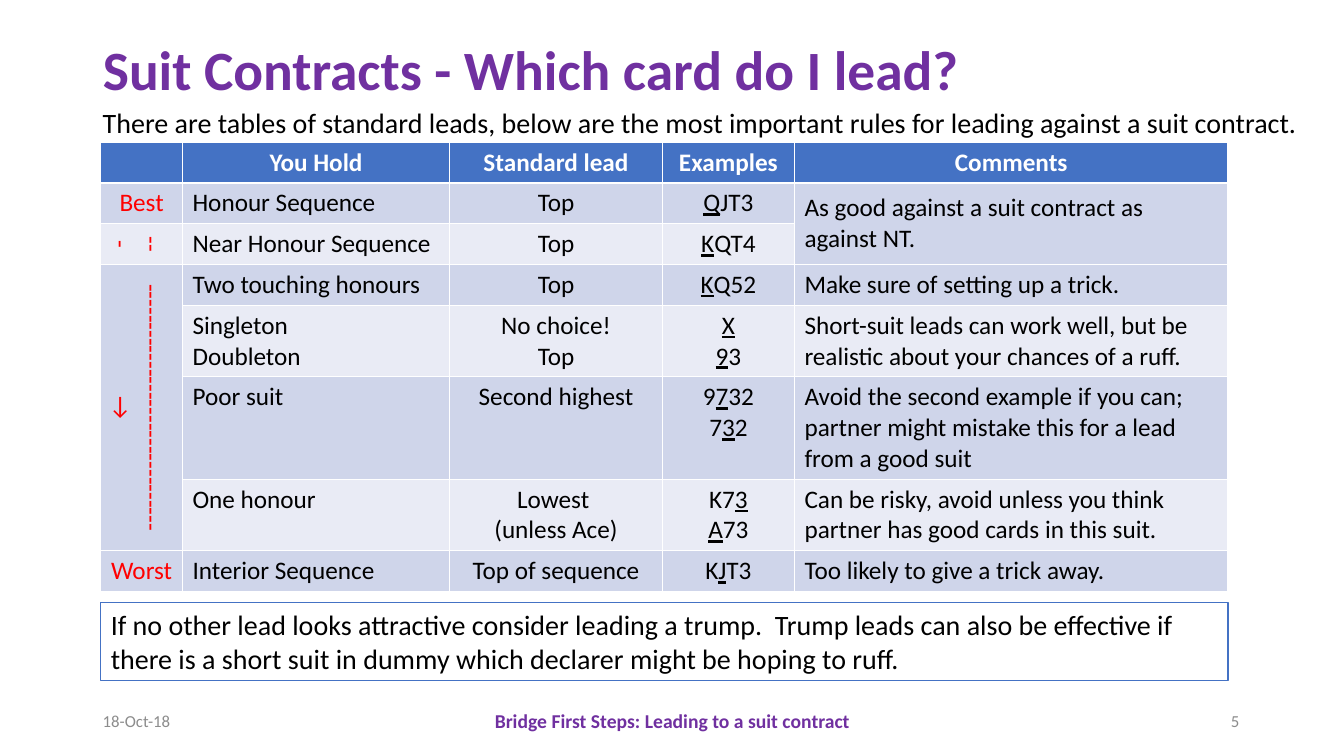
from pptx import Presentation
from pptx.dml.color import RGBColor
from pptx.enum.shapes import MSO_SHAPE
from pptx.enum.text import MSO_ANCHOR, MSO_AUTO_SIZE, PP_ALIGN
from pptx.util import Inches, Pt

PURPLE = RGBColor(0x70, 0x30, 0xA0)
BLUE = RGBColor(0x44, 0x72, 0xC4)
BANDS = RGBColor(0xE9, 0xEB, 0xF5), RGBColor(0xCF, 0xD5, 0xEA)
RED = RGBColor(0xFF, 0, 0)
GREY = RGBColor(0x8C, 0x8C, 0x8C)
BLACK = RGBColor(0, 0, 0)
WHITE = RGBColor(0xFF, 0xFF, 0xFF)
LEFT, MID, RIGHT = PP_ALIGN.LEFT, PP_ALIGN.CENTER, PP_ALIGN.RIGHT

TITLE = "Suit Contracts - Which card do I lead?"
INTRO = ("There are tables of standard leads, below are the most important "
         "rules for leading against a suit contract.")
ADVICE = ("If no other lead looks attractive consider leading a trump.  "
          "Trump leads can also be effective if there is a short suit in "
          "dummy which declarer might be hoping to ruff.")

# Underscores enclose the card that is led.
LEADS = [
    ("", "You Hold", "Standard lead", "Examples", "Comments"),
    ("Best", "Honour Sequence", "Top", "_Q_JT3",
     "As good against a suit contract as against NT."),
    ("---", "Near Honour Sequence", "Top", "_K_QT4", ""),
    ("-" * 32 + "→", "Two touching honours", "Top", "_K_Q52",
     "Make sure of setting up a trick."),
    ("", "Singleton\nDoubleton", "No choice!\nTop", "_X_\n_9_3",
     "Short-suit leads can work well, but be realistic about your chances "
     "of a ruff."),
    ("", "Poor suit", "Second highest", "9_7_32\n7_3_2",
     "Avoid the second example if you can; partner might mistake this for "
     "a lead from a good suit"),
    ("", "One honour", "Lowest \n(unless Ace)", "K7_3_\n_A_73",
     "Can be risky, avoid unless you think partner has good cards in this "
     "suit."),
    ("Worst", "Interior Sequence", "Top of sequence", "K_J_T3",
     "Too likely to give a trick away."),
]
LINES = [1, 1, 1, 1, 2, 3, 2, 1]
WIDTHS = [0.81, 2.65, 2.11, 1.31, 4.3]
ALIGNS = [MID, LEFT, MID, MID, LEFT]
MERGES = [((1, 4), (2, 4)), ((3, 0), (6, 0))]
ARROWS = [(2, 0), (3, 0)]

PAGE = 13.33
EDGE, INNER = 0.92, 1
WIDE = sum(WIDTHS)
FOOT, TALL = 6.95, 0.4
FOOTERS = [
    (EDGE, 3, "18-Oct-18", 12, GREY, LEFT, False),
    (4.42, 4.5, "Bridge First Steps: Leading to a suit contract", 14,
     PURPLE, MID, True),
    (9.39, 3, "5", 12, GREY, RIGHT, False),
]


def write(frame, text, size, color, align=LEFT, bold=False, space=None):
    """Fill the frame, underlining whatever stands between underscores."""
    for n, line in enumerate(text.split("\n")):
        para = frame.add_paragraph() if n else frame.paragraphs[0]
        para.alignment = align
        para.line_spacing = space
        for k, part in enumerate(line.split("_")):
            if not part:
                continue
            run = para.add_run()
            run.text = part
            font = run.font
            font.name, font.size, font.bold = "Calibri", Pt(size), bold
            font.color.rgb = color
            font.underline = k % 2 == 1


def add_box(slide, left, top, width, height, anchor=MSO_ANCHOR.TOP):
    box = slide.shapes.add_textbox(*map(Inches, (left, top, width, height)))
    frame = box.text_frame
    frame.word_wrap = True
    frame.vertical_anchor = anchor
    return frame


def add_title(slide):
    title = slide.shapes.title
    title.left, title.top, title.width, title.height = map(
        Inches, (EDGE, 0.4, 11.5, 0.64))
    frame = title.text_frame
    frame.auto_size = MSO_AUTO_SIZE.NONE
    frame.vertical_anchor = MSO_ANCHOR.MIDDLE
    write(frame, TITLE, 39.6, PURPLE, bold=True, space=0.9)


def add_intro(slide):
    """Run the box to the page's right edge, so the sentence fits one line."""
    frame = add_box(slide, EDGE, 1.04, PAGE - EDGE, 0.37)
    write(frame, INTRO, 20, BLACK, space=0.9)


def add_leads(slide):
    tall = [0.1 + 0.305 * n for n in LINES]
    table = slide.shapes.add_table(
        len(LEADS), len(WIDTHS),
        *map(Inches, (INNER, 1.41, WIDE, sum(tall)))).table
    for col, width in zip(table.columns, WIDTHS):
        col.width = Inches(width)
    for row, height in zip(table.rows, tall):
        row.height = Inches(height)
    for start, end in MERGES:
        table.cell(*start).merge(table.cell(*end))
    for r, row in enumerate(LEADS):
        for c, text in enumerate(row):
            cell = table.cell(r, c)
            head = r == 0
            cell.fill.solid()
            cell.fill.fore_color.rgb = BLUE if head else BANDS[r % 2]
            color = WHITE if head else RED if c == 0 else BLACK
            write(cell.text_frame, text, 18, color,
                  MID if head else ALIGNS[c], head)
            if (r, c) in ARROWS:
                cell._tc.get_or_add_tcPr().set("vert", "vert")
            elif c == 0 or cell.is_merge_origin:
                cell.vertical_anchor = MSO_ANCHOR.MIDDLE


def add_advice(slide):
    box = slide.shapes.add_shape(
        MSO_SHAPE.RECTANGLE, *map(Inches, (INNER, 5.98, WIDE, 0.77)))
    box.shadow.inherit = False
    box.fill.background()
    box.line.color.rgb = BLUE
    box.line.width = Pt(0.75)
    box.text_frame.word_wrap = True
    box.text_frame.vertical_anchor = MSO_ANCHOR.TOP
    write(box.text_frame, ADVICE, 20, BLACK)


def main():
    deck = Presentation()
    deck.slide_width, deck.slide_height = Inches(PAGE), Inches(7.5)
    slide = deck.slides.add_slide(deck.slide_layouts[5])
    add_title(slide)
    add_intro(slide)
    for left, width, *style in FOOTERS:
        write(add_box(slide, left, FOOT, width, TALL, MSO_ANCHOR.MIDDLE),
              *style)
    add_leads(slide)
    add_advice(slide)
    deck.save("out.pptx")


if __name__ == "__main__":
    main()
